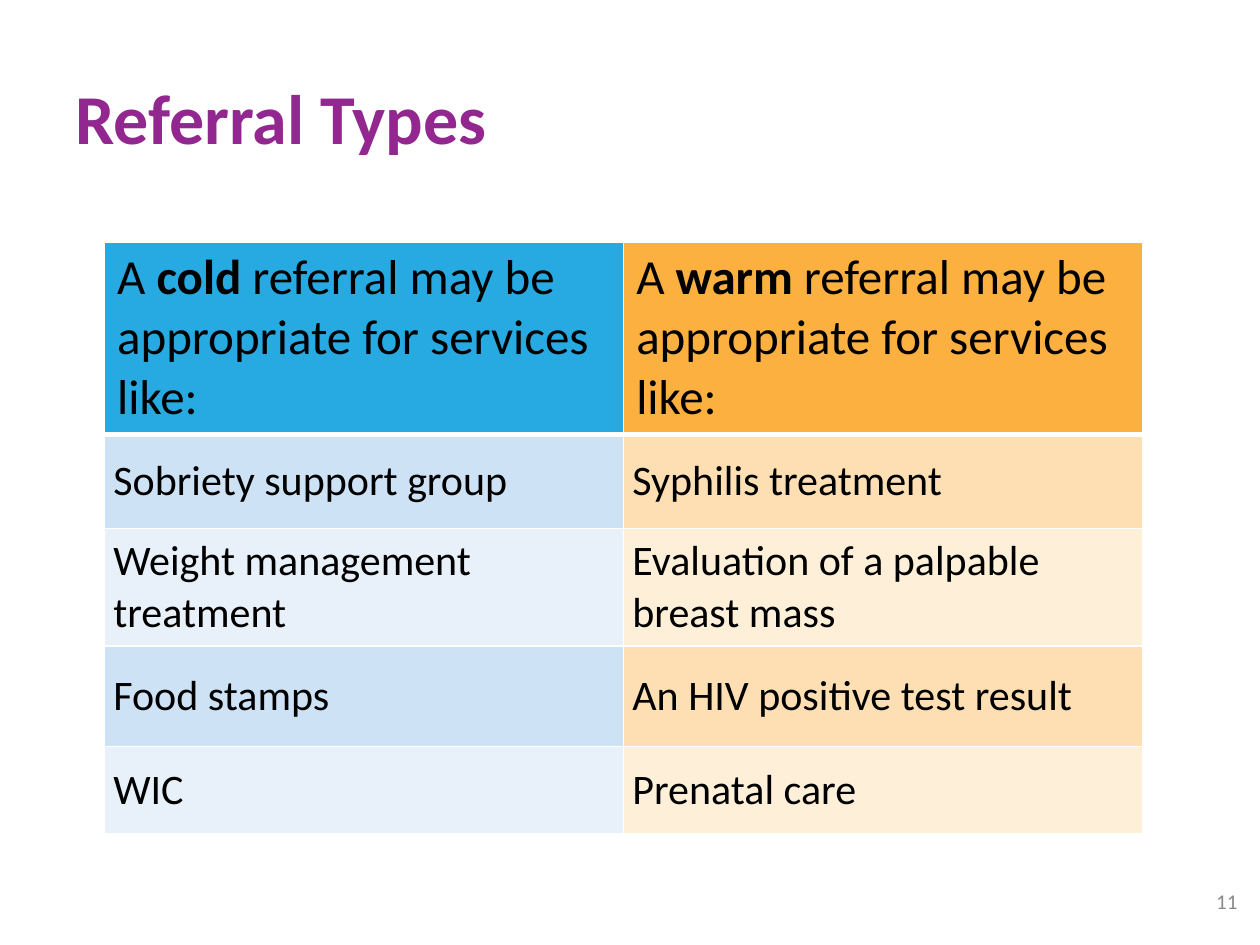
from lxml import etree
from pptx import Presentation
from pptx.dml.color import RGBColor
from pptx.enum.text import MSO_ANCHOR as Anchor, PP_ALIGN as Align
from pptx.oxml.ns import qn
from pptx.util import Inches, Pt

FONT = "Calibri"
HEADER_FILLS = ["27AAE1", "FBB040"]
BAND_FILLS = [["CDE2F4", "FDDFB3"], ["E8F1F9", "FEEFD9"]]
COLUMN_WIDTHS = [4.12, 4.12]
ROW_HEIGHTS = [1.5, 0.75, 0.93, 0.8, 0.69]
HEADERS = ["cold", "warm"]
SERVICES = [
    ("Sobriety support group", "Syphilis treatment"),
    ("Weight management treatment", "Evaluation of a palpable breast mass"),
    ("Food stamps", "An HIV positive test result"),
    ("WIC", "Prenatal care"),
]


def color(hex_string):
    return RGBColor.from_string(hex_string)


def add_run(paragraph, text, size, hex_string="000000", bold=False):
    run = paragraph.add_run()
    run.text = text
    run.font.name = FONT
    run.font.size = Pt(size)
    run.font.bold = bold
    run.font.color.rgb = color(hex_string)


def set_borders(cell, **widths):
    properties = cell._tc.get_or_add_tcPr()
    for side in "LRTB":
        line = etree.SubElement(properties, qn(f"a:ln{side}"), w=str(Pt(widths.get(side, 1))))
        fill = etree.SubElement(line, qn("a:solidFill"))
        etree.SubElement(fill, qn("a:srgbClr"), val="FFFFFF")


def format_cell(cell, hex_string, side_margin, anchor, **border_widths):
    set_borders(cell, **border_widths)
    cell.fill.solid()
    cell.fill.fore_color.rgb = color(hex_string)
    cell.margin_left = cell.margin_right = Inches(side_margin)
    cell.margin_top = cell.margin_bottom = Inches(0.05)
    cell.vertical_anchor = anchor


def place_title(slide, left, top, width, height):
    title = slide.shapes.title
    title.left, title.top = Inches(left), Inches(top)
    title.width, title.height = Inches(width), Inches(height)
    title.text_frame.vertical_anchor = Anchor.MIDDLE
    paragraph = title.text_frame.paragraphs[0]
    paragraph.alignment = Align.LEFT
    add_run(paragraph, "Referral Types", 40, "92278F", bold=True)


def add_referral_table(slide, left, top, width, height):
    table = slide.shapes.add_table(
        len(ROW_HEIGHTS), len(COLUMN_WIDTHS),
        Inches(left), Inches(top), Inches(width), Inches(height)).table
    table.horz_banding = table.first_row = False
    for column, column_width in zip(table.columns, COLUMN_WIDTHS):
        column.width = Inches(column_width)
    for row, row_height in zip(table.rows, ROW_HEIGHTS):
        row.height = Inches(row_height)

    # Header row, with a thicker rule below it
    for column_index, kind in enumerate(HEADERS):
        cell = table.cell(0, column_index)
        format_cell(cell, HEADER_FILLS[column_index], 0.1, Anchor.TOP, B=3)
        paragraph = cell.text_frame.paragraphs[0]
        add_run(paragraph, "A ", 28)
        add_run(paragraph, kind, 28, bold=True)
        add_run(paragraph, " referral may be appropriate for services like:", 28)

    # Banded service rows
    for row_index, services in enumerate(SERVICES, start=1):
        fills = BAND_FILLS[(row_index - 1) % 2]
        for column_index, service in enumerate(services):
            cell = table.cell(row_index, column_index)
            format_cell(cell, fills[column_index], 0.07, Anchor.MIDDLE,
                        T=3 if row_index == 1 else 1)
            add_run(cell.text_frame.paragraphs[0], service, 24)


def add_page_number(slide, left, top, width, height):
    box = slide.shapes.add_textbox(Inches(left), Inches(top), Inches(width), Inches(height))
    box.text_frame.word_wrap = True
    box.text_frame.vertical_anchor = Anchor.MIDDLE
    paragraph = box.text_frame.paragraphs[0]
    paragraph.alignment = Align.RIGHT
    add_run(paragraph, "11", 12, "898989")


def main():
    presentation = Presentation()
    presentation.slide_width, presentation.slide_height = Inches(10), Inches(7.5)
    slide = presentation.slides.add_slide(presentation.slide_layouts.get_by_name("Title Only"))
    place_title(slide, 0.5, 0.3, 5.42, 1.25)
    add_referral_table(slide, 0.83, 1.92, sum(COLUMN_WIDTHS), sum(ROW_HEIGHTS))
    add_page_number(slide, 9.42, 6.95, 0.5, 0.4)
    presentation.save("out.pptx")


if __name__ == "__main__":
    main()
